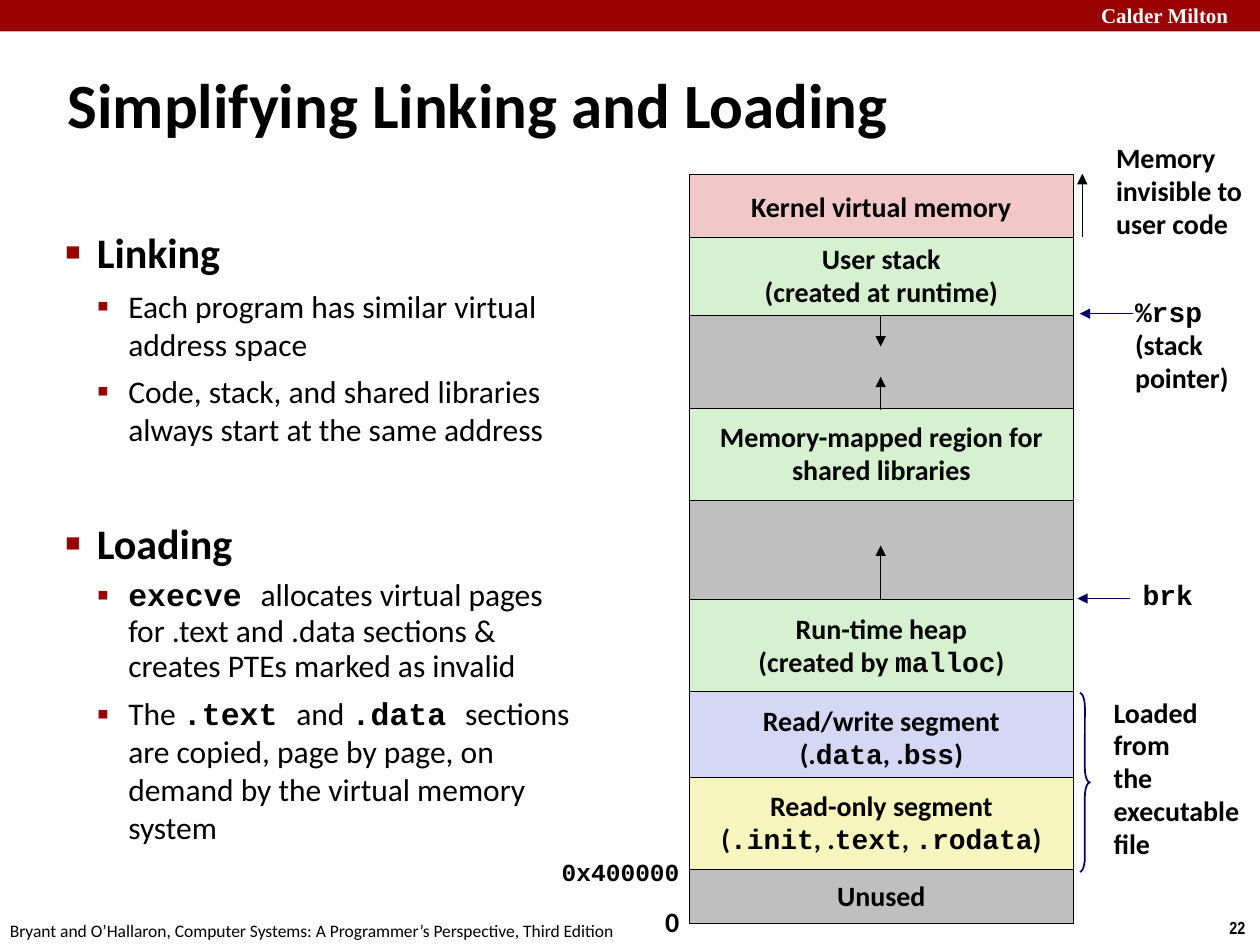
import pptx
import pptx.dml.color
import pptx.enum.shapes
import pptx.enum.text
import pptx.oxml
import pptx.oxml.ns
import pptx.util
from lxml import etree

Inches, Pt = pptx.util.Inches, pptx.util.Pt
RGB = pptx.dml.color.RGBColor.from_string
Shape = pptx.enum.shapes.MSO_SHAPE
Align = pptx.enum.text.PP_ALIGN
Anchor = pptx.enum.text.MSO_ANCHOR
Fit = pptx.enum.text.MSO_AUTO_SIZE
qn = pptx.oxml.ns.qn

COLORS = {
    "red": "990000", "white": "FFFFFF", "black": "000000", "navy": "000066",
    "pink": "F1C7C7", "green": "D5F1CF", "gray": "BFBFBF",
    "blue": "D6D6F5", "yellow": "F6F5BD",
}

deck = pptx.Presentation()
deck.slide_width, deck.slide_height = Inches(10), Inches(7.5)
slide = deck.slides.add_slide(deck.slide_layouts[6])
shapes = slide.shapes


def fill_par(par, text, size, bold=True, color="black", face="Calibri", mono_bold=True):
    """Fill a paragraph; parts between backticks are set in Courier New."""
    par.font.size, par.font.color.rgb = Pt(size), RGB(COLORS[color])
    parts = [(i % 2, part) for i, part in enumerate(text.split("`")) if part]
    if len(parts) == 1:
        par.font.name = "Courier New" if parts[0][0] else face
        par.font.bold = bold
    for mono, part in parts:
        run = par.add_run()
        run.text = part
        if len(parts) > 1:
            run.font.name = "Courier New" if mono else face
            run.font.bold = mono_bold if mono else bold


def write(frame, text, size=16, tight=True, **style):
    """Write one paragraph for each line of text."""
    for i, line in enumerate(text.split("\n")):
        par = frame.add_paragraph() if i else frame.paragraphs[0]
        if tight:
            par.line_spacing = 0.94 if line.startswith("`") else 0.98
        fill_par(par, line, size, **style)
    return frame


# Top bar
bar = shapes.add_shape(Shape.RECTANGLE, 0, 0, Inches(10), Inches(0.25))
bar.shadow.inherit = False
bar.fill.solid()
bar.fill.fore_color.rgb = RGB(COLORS["red"])
bar.line.fill.background()

# Header, page number, footer
for box, text, size, style in [
    ((8.64, -0.03, 1.43, 0.3), "Calder Milton", 12, dict(face="Times New Roman", color="white")),
    ((9.66, 7.23, 0.34, 0.27), "22", 10, dict(face="Arial Narrow")),
    ((-0.02, 7.25, 5.08, 0.27),
     "Bryant and O’Hallaron, Computer Systems: A Programmer’s Perspective, Third Edition",
     10, dict(bold=False)),
]:
    frame = shapes.add_textbox(*map(Inches, box)).text_frame
    frame.word_wrap = False
    write(frame, text, size, tight=False, **style)

# Title
frame = shapes.add_textbox(Inches(0.44), Inches(0.39), Inches(9.06), Inches(0.86)).text_frame
frame.word_wrap, frame.vertical_anchor = True, Anchor.MIDDLE
write(frame, "Simplifying Linking and Loading", 36, tight=False)

# Bullets: level, space before, line spacing, text
body = shapes.add_textbox(Inches(0.42), Inches(1.75), Inches(4.33), Inches(5.23)).text_frame
body.word_wrap = True
for i, (level, before, spacing, text) in enumerate([
    (0, 12.5, None, "Linking"),
    (1, 5.6, None, "Each program has similar virtual address space"),
    (1, 5.6, None, "Code, stack, and shared libraries always start at the same address"),
    (0, 40, None, "Loading"),
    (1, 5.6, 0.94, "`execve `allocates virtual pages for .text and .data sections & "
                   "creates PTEs marked as invalid"),
    (1, 5.6, None, "The `.text `and `.data `sections are copied, page by page, on "
                   "demand by the virtual memory system"),
]):
    par = body.add_paragraph() if i else body.paragraphs[0]
    par.level, par.space_before = level, Pt(before)
    if spacing:
        par.line_spacing = spacing
    props = par._p.get_or_add_pPr()
    props.set("marL", str(Inches(0.25 * (level + 1))))
    props.set("indent", str(Inches(-0.25)))
    tint = etree.SubElement(props, qn("a:buClr"))
    etree.SubElement(tint, qn("a:srgbClr"), val=COLORS["red"])
    etree.SubElement(props, qn("a:buSzPct"), val="110000" if level else "60000")
    etree.SubElement(props, qn("a:buFont"), typeface="Times New Roman")
    etree.SubElement(props, qn("a:buChar"), char="▪" if level else "■")
    fill_par(par, text, 18 if level else 24, bold=not level)

# Memory map: top, height, fill, text
for top, height, color, text in [
    (1.38, 0.53, "pink", "Kernel virtual memory"),
    (2.25, 0.99, "gray", ""),
    (1.88, 0.62, "green", "User stack\n(created at runtime)"),
    (3.24, 0.73, "green", "Memory-mapped region for\nshared libraries"),
    (3.97, 0.79, "gray", ""),
    (4.76, 0.73, "green", "Run-time heap\n(created by `malloc`)"),
    (5.49, 0.73, "blue", "Read/write segment\n(.`data`, .`bss`)"),
    (6.17, 0.73, "yellow", "Read-only segment\n(`.init`, .`text`, `.rodata`)"),
    (6.9, 0.43, "gray", "Unused"),
]:
    block = shapes.add_shape(Shape.RECTANGLE, Inches(5.47), Inches(top), Inches(3.05), Inches(height))
    block.shadow.inherit = False
    block.fill.solid()
    block.fill.fore_color.rgb = RGB(COLORS[color])
    block.line.color.rgb, block.line.width = RGB(COLORS["black"]), Pt(0.25)
    if text:
        frame = block.text_frame
        frame.word_wrap, frame.vertical_anchor = False, Anchor.MIDDLE
        write(frame, text)
        for par in frame.paragraphs:
            par.alignment = Align.CENTER

# Arrows
for x1, y1, x2, y2, color in [
    (6.99, 2.5, 6.99, 2.75, "black"),
    (6.99, 3.25, 6.99, 2.99, "black"),
    (6.99, 4.75, 6.99, 4.33, "black"),
    (8.59, 1.88, 8.59, 1.38, "black"),
    (8.99, 2.49, 8.57, 2.49, "navy"),
    (8.97, 4.75, 8.55, 4.75, "navy"),
]:
    arrow = shapes.add_connector(pptx.enum.shapes.MSO_CONNECTOR.STRAIGHT,
                                 *map(Inches, (x1, y1, x2, y2)))
    arrow.line.color.rgb, arrow.line.width = RGB(COLORS[color]), Pt(0.25)
    etree.SubElement(arrow.line._get_or_add_ln(), qn("a:tailEnd"), type="triangle")
    etree.SubElement(arrow._element.spPr, qn("a:effectLst"))

# Brace beside the loaded segments
brace = shapes.add_shape(Shape.RIGHT_BRACE, Inches(8.57), Inches(5.5), Inches(0.08), Inches(1.42))
brace.shadow.inherit = False
brace.adjustments[0], brace.adjustments[1] = 1.42, 0.5
brace.fill.background()
brace.line.color.rgb, brace.line.width = RGB(COLORS["navy"]), Pt(1)

# Labels around the map
for box, text, size in [
    ((8.76, 1.08, 1.26, 0.89), "Memory\ninvisible to\nuser code", 16),
    ((8.91, 2.31, 0.95, 0.88), "`%rsp`\n(stack\npointer)", 16),
    ((8.97, 4.56, 0.6, 0.36), "`brk`", 16),
    ((8.74, 5.48, 1.26, 1.42), "Loaded\nfrom\nthe\nexecutable\nfile", 16),
    ((4.36, 6.77, 1.14, 0.33), "`0x400000`", 14),
    ((5.18, 7.14, 0.31, 0.37), "0", 16),
]:
    frame = shapes.add_textbox(*map(Inches, box)).text_frame
    frame.word_wrap, frame.auto_size = False, Fit.SHAPE_TO_FIT_TEXT
    write(frame, text, size)

deck.save("out.pptx")
